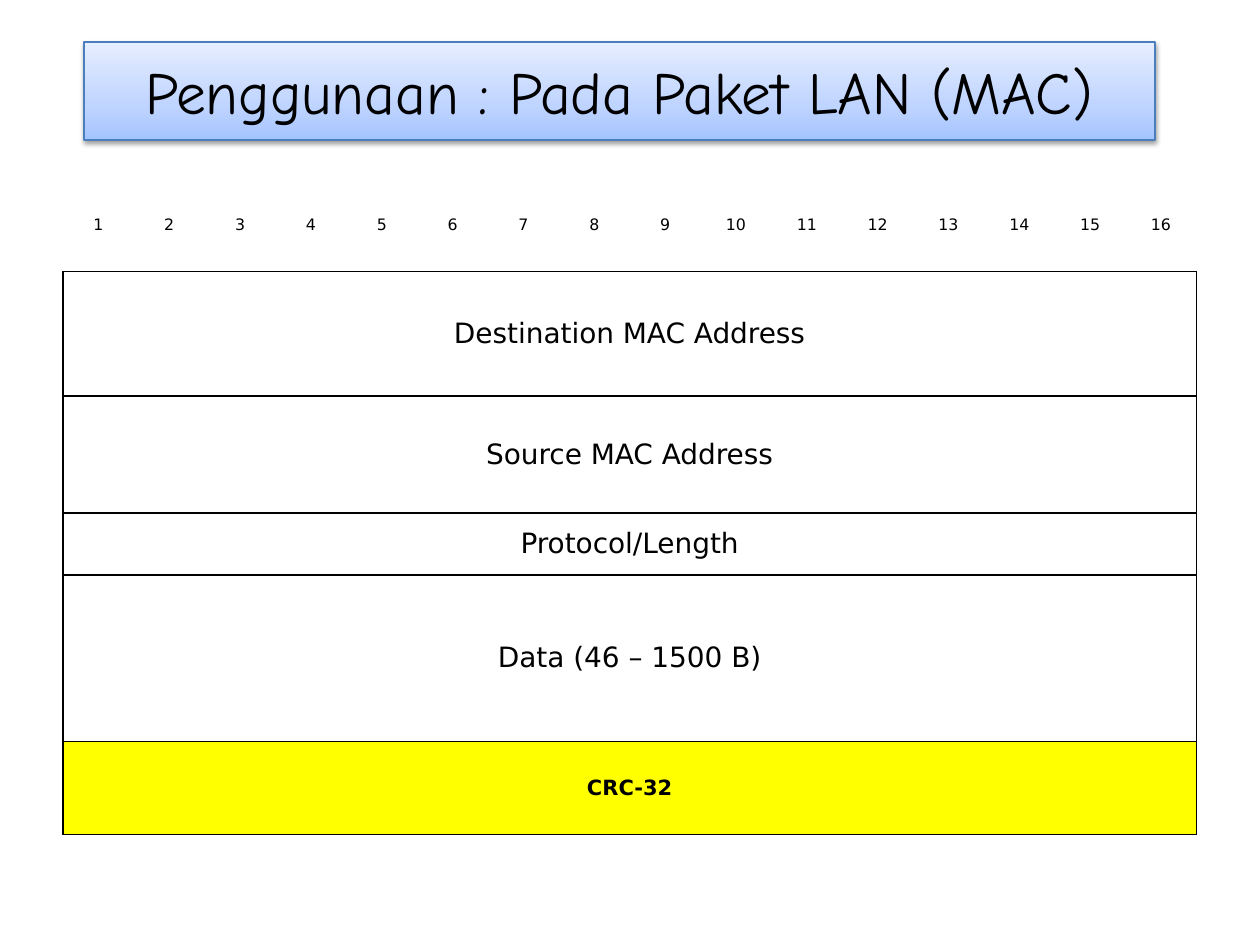
"""Build a slide showing the field layout of a LAN (MAC) packet."""
from lxml.etree import SubElement
from pptx import Presentation
from pptx.dml.color import RGBColor
from pptx.enum.shapes import MSO_SHAPE as Shape
from pptx.enum.text import MSO_ANCHOR as Anchor, PP_ALIGN as Align
from pptx.oxml import parse_xml
from pptx.oxml.ns import nsdecls, qn
from pptx.util import Pt

COLORS = {
    "text": "000000",
    "border": "000000",
    "title_line": "4B7EBC",
    "title_bottom": "A4C4FF",
    "title_middle": "BFD4FF",
    "title_top": "E6EEFF",
    "shadow": "000000",
    "checksum": "FFFF00",
}
TITLE_FONT, TABLE_FONT = "Comic Neue", "DejaVu Sans"
BITS = 16
BIT_WIDTH = 40.5
HEADER_HEIGHT = 35.3
INDENT = Pt(27)
FIELDS = [
    ("Destination MAC Address", 71.1),
    ("Source MAC Address", 66.9),
    ("Protocol/Length", 35.3),
    ("Data (46 – 1500 B)", 95.1),
    ("CRC-32", 53.3),
]


def rgb(name):
    """Return the named colour."""
    return RGBColor.from_string(COLORS[name])


def write(frame, text, font, size, bold=False):
    """Put one centred paragraph into a text frame and return it."""
    frame.text = text
    paragraph = frame.paragraphs[0]
    paragraph.alignment = Align.CENTER
    style = paragraph.runs[0].font
    style.name, style.size, style.bold = font, Pt(size), bold
    style.color.rgb = rgb("text")
    return paragraph


def add_gradient(banner):
    """Fill the banner with a three-stop gradient rising from its bottom."""
    stops = ((0, "title_bottom"), (35, "title_middle"), (100, "title_top"))
    stop_xml = "".join(
        f'<a:gs pos="{share * 1000}"><a:srgbClr val="{COLORS[name]}"/></a:gs>'
        for share, name in stops
    )
    gradient = parse_xml(
        f'<a:gradFill {nsdecls("a")} rotWithShape="1"><a:gsLst>{stop_xml}</a:gsLst>'
        '<a:lin ang="16200000" scaled="0"/></a:gradFill>'
    )
    banner._element.spPr.find(qn("a:prstGeom")).addnext(gradient)


def add_shadow(banner):
    """Give the banner a soft shadow below."""
    banner.shadow.inherit = False
    effects = banner._element.spPr.find(qn("a:effectLst"))
    shadow = SubElement(
        effects, qn("a:outerShdw"), blurRad=str(Pt(3.1)), dist=str(Pt(1.6)),
        dir="5400000", rotWithShape="0",
    )
    color = SubElement(shadow, qn("a:srgbClr"), val=COLORS["shadow"])
    SubElement(color, qn("a:alpha"), val="38000")


def add_title(slide, text):
    """Add the title banner."""
    banner = slide.shapes.add_shape(Shape.RECTANGLE, Pt(48), Pt(24), Pt(612), Pt(56))
    add_gradient(banner)
    banner.line.color.rgb = rgb("title_line")
    banner.line.width = Pt(0.75)
    add_shadow(banner)
    banner.text_frame.vertical_anchor = Anchor.MIDDLE
    write(banner.text_frame, text, TITLE_FONT, 34)


def set_borders(cell, sides):
    """Draw thin solid borders on the given sides of a cell."""
    properties = cell._tc.get_or_add_tcPr()
    for position, side in enumerate(sides):
        border = parse_xml(
            f'<a:ln{side} {nsdecls("a")} w="{Pt(1)}"><a:solidFill>'
            f'<a:srgbClr val="{COLORS["border"]}"/></a:solidFill></a:ln{side}>'
        )
        properties.insert(position, border)


def fill_cell(cell, text, size, bold=False):
    """Write a cell's text with a hanging indent."""
    paragraph = write(cell.text_frame, text, TABLE_FONT, size, bold)
    properties = paragraph._p.get_or_add_pPr()
    properties.set("marL", str(INDENT))
    properties.set("indent", str(-INDENT))


def add_field(table, row, name):
    """Fill one full-width field row."""
    is_checksum = name == "CRC-32"
    for column in range(BITS):
        cell = table.cell(row, column)
        if is_checksum:
            cell.fill.solid()
            cell.fill.fore_color.rgb = rgb("checksum")
        else:
            cell.fill.background()
        set_borders(cell, "LRTB")
    field = table.cell(row, 0)
    field.merge(table.cell(row, BITS - 1))
    field.vertical_anchor = Anchor.MIDDLE
    fill_cell(field, name, 12 if is_checksum else 16, is_checksum)


def add_packet(slide):
    """Add the packet table with its bit numbers and fields."""
    heights = [HEADER_HEIGHT] + [height for _, height in FIELDS]
    table = slide.shapes.add_table(
        len(heights), BITS, Pt(36), Pt(120), Pt(BITS * BIT_WIDTH), Pt(sum(heights))
    ).table
    table.first_row = table.horz_banding = False
    for column in table.columns:
        column.width = Pt(BIT_WIDTH)
    for row, height in zip(table.rows, heights):
        row.height = Pt(height)
    for bit in range(BITS):
        cell = table.cell(0, bit)
        cell.fill.background()
        set_borders(cell, "B")
        fill_cell(cell, str(bit + 1), 9)
    for row, (name, _) in enumerate(FIELDS, start=1):
        add_field(table, row, name)


def main():
    """Build and save the slide."""
    deck = Presentation()
    deck.slide_width, deck.slide_height = Pt(720), Pt(540)
    slide = deck.slides.add_slide(deck.slide_layouts[6])
    add_title(slide, "Penggunaan : Pada Paket LAN (MAC)")
    add_packet(slide)
    deck.save("out.pptx")


if __name__ == "__main__":
    main()
